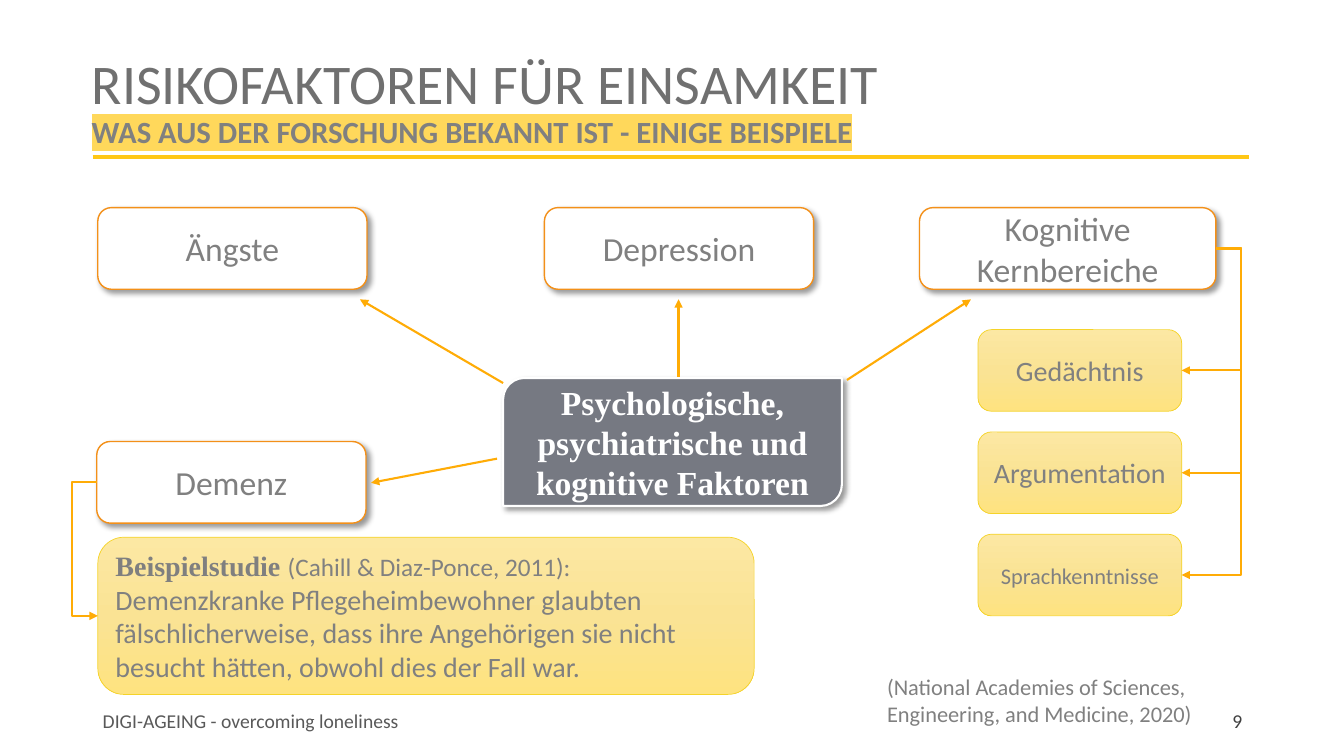
from pptx import Presentation
from pptx.dml.color import RGBColor
from pptx.enum.shapes import MSO_CONNECTOR, MSO_SHAPE
from pptx.enum.text import MSO_ANCHOR, MSO_AUTO_SIZE, PP_ALIGN
from pptx.oxml import parse_xml
from pptx.oxml.ns import nsdecls, qn
from pptx.util import Inches, Pt
from lxml.etree import SubElement

SANS, SERIF = "Calibri", "Times New Roman"
GREY, ORANGE = "808080", "FFAC06"
TOP, LEFT, BOTTOM, RIGHT = range(4)


def color(value):
    return RGBColor.from_string(value)


def set_font(font, size, name=SANS, ink=GREY, bold=False):
    font.size, font.name, font.bold = Pt(size), name, bold
    font.color.rgb = color(ink)


def add_span(para, text, *style):
    span = para.add_run()
    span.text = text
    set_font(span.font, *style)
    return span


def add_shadow(shape):
    shape._element.spPr.append(parse_xml(
        f'<a:effectLst {nsdecls("a")}>'
        '<a:outerShdw blurRad="50800" dist="38100" dir="2700000" algn="tl" rotWithShape="0">'
        '<a:srgbClr val="000000"><a:alpha val="40000"/></a:srgbClr>'
        '</a:outerShdw></a:effectLst>'))


def add_gradient(shape):
    stops = ((0, "FCE8A3"), (50000, "FAE394"), (100000, "FEE380"))
    stop_xml = "".join(f'<a:gs pos="{position}"><a:srgbClr val="{value}"/></a:gs>'
                       for position, value in stops)
    geometry = shape._element.spPr.find(qn("a:prstGeom"))
    geometry.addnext(parse_xml(
        f'<a:gradFill {nsdecls("a")} rotWithShape="1"><a:gsLst>{stop_xml}</a:gsLst>'
        '<a:lin ang="5400000" scaled="0"/></a:gradFill>'))


class SlideBuilder:
    def __init__(self, deck):
        self.slide = deck.slides.add_slide(deck.slide_layouts[5])
        self.shapes = self.slide.shapes

    def title(self, text, subtitle, left, top, width, height):
        title = self.shapes.title
        title.left, title.top = Inches(left), Inches(top)
        title.width, title.height = Inches(width), Inches(height)
        frame = title.text_frame
        frame.auto_size = MSO_AUTO_SIZE.NONE
        frame.vertical_anchor = MSO_ANCHOR.MIDDLE
        para = frame.paragraphs[0]
        para.alignment, para.line_spacing = PP_ALIGN.LEFT, 0.9
        add_span(para, text, 40, SANS, "707070")
        para.add_line_break()
        span = add_span(para, subtitle, 22, SANS, GREY, True)
        fill = span.font._element.find(qn("a:solidFill"))
        fill.addnext(parse_xml(f'<a:highlight {nsdecls("a")}>'
                               '<a:srgbClr val="FFD85B"/></a:highlight>'))

    def text(self, lines, left, top, width, height, size, ink=GREY,
             align=PP_ALIGN.LEFT, anchor=MSO_ANCHOR.MIDDLE):
        box = self.shapes.add_textbox(Inches(left), Inches(top), Inches(width), Inches(height))
        frame = box.text_frame
        frame.word_wrap, frame.vertical_anchor = True, anchor
        frame.text = "\n".join(lines)
        for para in frame.paragraphs:
            para.alignment = align
            set_font(para.font, size, SANS, ink)

    def box(self, text, left, top, width, height, size, fill=None, line="F5D328",
            weight=0.5, kind=MSO_SHAPE.ROUNDED_RECTANGLE, font=SANS, ink=GREY, bold=False):
        """Add a solid box with a shadow, or a yellow gradient box when fill is None."""
        box = self.shapes.add_shape(kind, Inches(left), Inches(top), Inches(width), Inches(height))
        box.line.color.rgb, box.line.width = color(line), Pt(weight)
        if fill:
            box.fill.solid()
            box.fill.fore_color.rgb = color(fill)
            add_shadow(box)
        else:
            add_gradient(box)
            box.shadow.inherit = False
        frame = box.text_frame
        frame.word_wrap, frame.vertical_anchor = True, MSO_ANCHOR.MIDDLE
        para = frame.paragraphs[0]
        para.alignment = PP_ALIGN.CENTER
        if text:
            para.text = text
            set_font(para.font, size, font, ink, bold)
        return box

    def factor(self, text, left, top, width=2.67):
        return self.box(text, left, top, width, 0.81, 24, "FFFFFF", "F39019", 1)

    def line(self, start, end, ink=ORANGE, weight=1.5, arrow=True, kind=MSO_CONNECTOR.STRAIGHT):
        line = self.shapes.add_connector(kind, *map(Inches, start + end))
        line.line.color.rgb, line.line.width = color(ink), Pt(weight)
        if arrow:
            SubElement(line.line._get_or_add_ln(), qn("a:tailEnd"), type="triangle")
        SubElement(line._element.spPr, qn("a:effectLst"))
        return line

    def elbow(self, source, target, side, bend):
        """Join the same side of two boxes by an arrow that turns at x = bend."""
        line = self.line((0, 0), (1, 1), kind=MSO_CONNECTOR.ELBOW)
        line.begin_connect(source, side)
        line.end_connect(target, side)
        ratio = (Inches(bend) - line.begin_x) / (line.end_x - line.begin_x)
        guides = line._element.spPr.find(qn("a:prstGeom")).get_or_add_avLst()
        SubElement(guides, qn("a:gd"), name="adj1", fmla=f"val {round(ratio * 100000)}")


def main():
    deck = Presentation()
    deck.slide_width, deck.slide_height = Inches(13.33), Inches(7.5)
    page = SlideBuilder(deck)

    page.line((0.92, 1.56), (12.39, 1.56), "FFC715", 3, arrow=False)
    page.title("RISIKOFAKTOREN FÜR EINSAMKEIT",
               "WAS AUS DER FORSCHUNG BEKANNT IST - EINIGE BEISPIELE", 0.81, 0.47, 11.85, 1.1)
    page.text(["DIGI-AGEING - overcoming loneliness"], 0.92, 6.95, 7.45, 0.39, 14, "595959")
    page.text(["9"], 9.42, 6.95, 3, 0.4, 14, "404040", PP_ALIGN.RIGHT)
    page.text(["(National Academies of Sciences,", "Engineering, and Medicine, 2020)"],
              8.7, 6.63, 3.36, 0.64, 16, anchor=MSO_ANCHOR.TOP)

    page.box("Psychologische, psychiatrische und kognitive Faktoren", 4.99, 3.75, 3.36, 1.27, 24,
             "767982", "FFFFFF", 1.5, MSO_SHAPE.ROUND_2_DIAG_RECTANGLE, SERIF, "FFFFFF", True)
    page.factor("Ängste", 0.97, 2.06)
    page.factor("Depression", 5.4, 2.06)
    core_areas = page.factor("Kognitive Kernbereiche", 9.12, 2.06, 2.94)
    dementia = page.factor("Demenz", 0.96, 4.38)

    for start, end in (((4.99, 3.8), (3.57, 2.97)), ((6.73, 3.74), (6.73, 2.97)),
                       ((8.4, 3.77), (9.63, 2.97)), ((4.93, 4.55), (3.68, 4.79))):
        page.line(start, end)

    skills = (("Gedächtnis", 20), ("Argumentation", 20), ("Sprachkenntnisse", 16))
    for row, (skill, size) in enumerate(skills):
        skill_box = page.box(skill, 9.7, 3.27 + row * 1.015, 2.02, 0.81, size)
        page.elbow(core_areas, skill_box, RIGHT, 12.31)

    study = page.box("", 0.97, 5.33, 6.51, 1.56, 20)
    heading = study.text_frame.paragraphs[0]
    add_span(heading, "Beispielstudie ", 20, SERIF, "7F7F7F", True)
    add_span(heading, "(Cahill & Diaz-Ponce, 2011):", 18)
    finding = study.text_frame.add_paragraph()
    finding.text = ("Demenzkranke Pflegeheimbewohner glaubten fälschlicherweise, dass ihre "
                    "Angehörigen sie nicht besucht hätten, obwohl dies der Fall war.")
    set_font(finding.font, 20)
    heading.alignment = finding.alignment = PP_ALIGN.LEFT
    page.elbow(dementia, study, LEFT, 0.71)

    deck.save("out.pptx")


if __name__ == "__main__":
    main()
